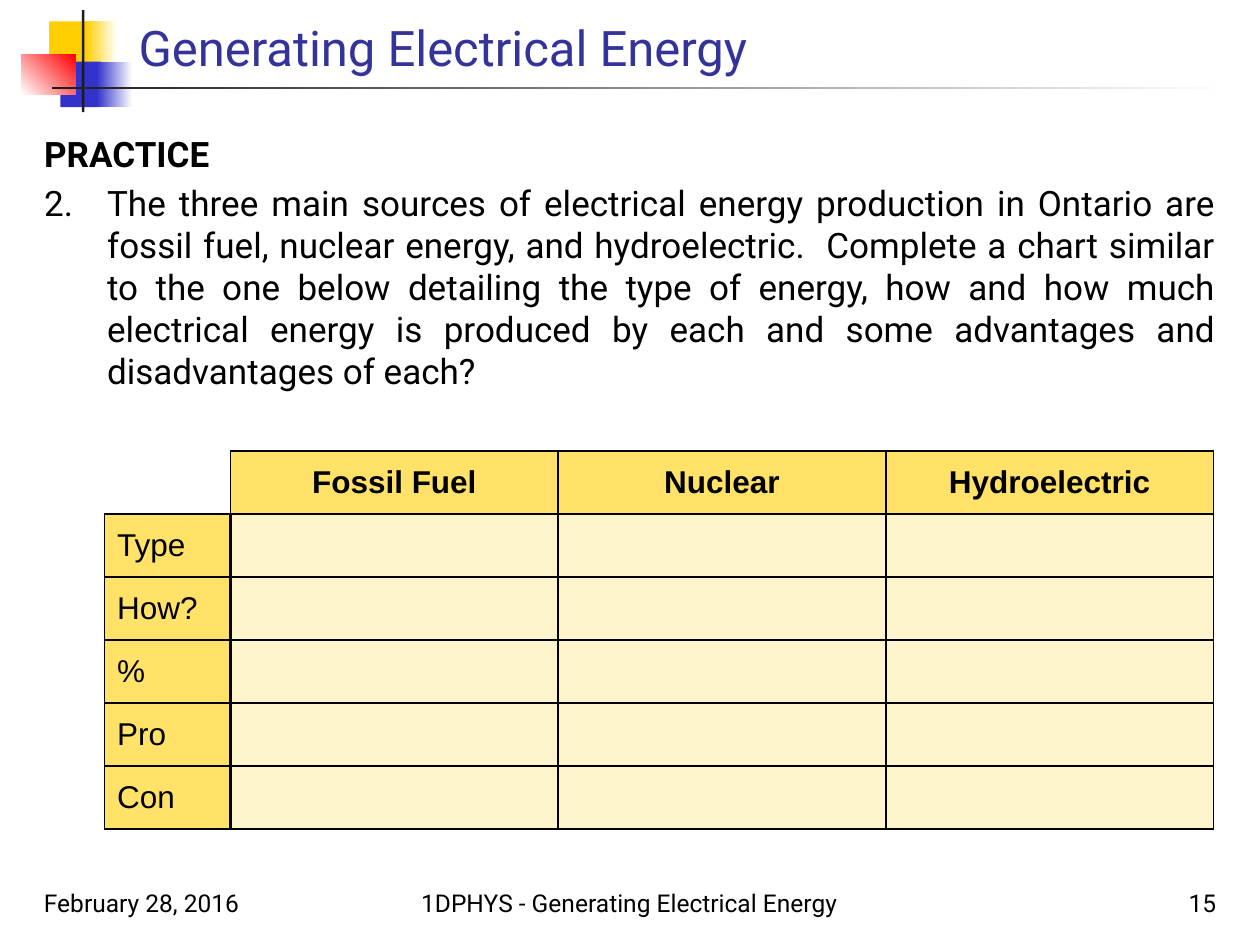
from pptx import Presentation
from pptx.dml.color import RGBColor
from pptx.enum.shapes import MSO_SHAPE as SHAPE
from pptx.enum.text import MSO_ANCHOR as ANCHOR, MSO_AUTO_SIZE as AUTO, PP_ALIGN as ALIGN
from pptx.oxml.xmlchemy import OxmlElement as Element
from pptx.util import Inches, Pt

BLACK = RGBColor(0x00, 0x00, 0x00)
WHITE = RGBColor(0xFF, 0xFF, 0xFF)
CHARCOAL = RGBColor(0x1C, 0x1C, 0x1C)
YELLOW = RGBColor(0xFF, 0xCF, 0x01)
BLUE = RGBColor(0x33, 0x33, 0xCC)
RED = RGBColor(0xFF, 0x00, 0x00)
NAVY = RGBColor(0x33, 0x33, 0x99)
GOLD = RGBColor(0xFF, 0xE2, 0x67)
CREAM = RGBColor(0xFF, 0xF5, 0xCC)

BODY = {"name": "Roboto", "size": Pt(20), "bold": False}
FOOTER = {"name": "Roboto", "size": Pt(14)}
CELL = {"name": "Arial", "size": Pt(18), "bold": False}

EMBLEM = [
    ((0.39, 0.17, 0.34, 0.36), (YELLOW,), 0),
    ((0.68, 0.17, 0.25, 0.36), (YELLOW, WHITE), 0),
    ((0.48, 0.49, 0.32, 0.36), (BLUE,), 0),
    ((0.77, 0.49, 0.28, 0.36), (BLUE, WHITE), 0),
    ((0.17, 0.43, 0.43, 0.32), (WHITE, RED), 45),
    ((0.65, 0.08, 0.02, 0.81), (CHARCOAL,), 0),
    ((0.41, 0.69, 9.33, 0.02), (CHARCOAL, WHITE), 0),
]
QUESTION = (
    "2.\tThe three main sources of electrical energy production in Ontario are "
    "fossil fuel, nuclear energy, and hydroelectric.  Complete a chart similar to "
    "the one below detailing the type of energy, how and how much electrical energy "
    "is produced by each and some advantages and disadvantages of each?"
)
FOOTERS = [
    (0.25, 2.08, "February 28, 2016", ALIGN.LEFT),
    (2.58, 4.83, "1DPHYS - Generating Electrical Energy", ALIGN.CENTER),
    (7.67, 2.08, "15", ALIGN.RIGHT),
]
SOURCES = ["Fossil Fuel", "Nuclear", "Hydroelectric"]
TOPICS = ["Type", "How?", "%", "Pro", "Con"]


def write(p, text, font, color=BLACK, align=ALIGN.LEFT):
    p.alignment = align
    r = p.add_run()
    r.text = text
    for key, value in font.items():
        setattr(r.font, key, value)
    r.font.color.rgb = color


def place(sp, left, top, width, height):
    box = {"left": left, "top": top, "width": width, "height": height}
    for key, value in box.items():
        setattr(sp, key, Inches(value))


def add_block(shapes, box, colors, angle):
    sp = shapes.add_shape(SHAPE.RECTANGLE, *map(Inches, box))
    sp.shadow.inherit = False
    sp.line.fill.background()
    if len(colors) == 1:
        sp.fill.solid()
        sp.fill.fore_color.rgb = colors[0]
    else:
        sp.fill.gradient()
        sp.fill.gradient_angle = angle
        for stop, color in zip(sp.fill.gradient_stops, colors):
            stop.color.rgb = color


def add_title(s):
    sp = s.shapes.title
    place(sp, 1, 0.08, 8.75, 0.58)
    tf = sp.text_frame
    tf.auto_size = AUTO.NONE
    tf.vertical_anchor = ANCHOR.BOTTOM
    write(tf.paragraphs[0], "Generating Electrical Energy",
          {"name": "Roboto", "size": Pt(28)}, NAVY)


def add_body(s):
    sp = s.placeholders[1]
    place(sp, 0.25, 1, 9.5, 5.67)
    tf = sp.text_frame
    tf.auto_size = AUTO.NONE
    write(tf.paragraphs[0], "PRACTICE", {**BODY, "bold": True}, align=ALIGN.JUSTIFY)
    write(tf.add_paragraph(), QUESTION, BODY, align=ALIGN.JUSTIFY)
    for p, indent in zip(tf.paragraphs, (0, 0.5)):
        p.space_before = Pt(4)
        pPr = p._p.get_or_add_pPr()
        pPr.set("marL", str(Inches(indent)))
        pPr.set("indent", str(-Inches(indent)))
        pPr.append(Element("a:buNone"))


def add_footer(s, left, width, text, align):
    sp = s.shapes.add_textbox(*map(Inches, (left, 6.83, width, 0.5)))
    tf = sp.text_frame
    tf.word_wrap = True
    tf.vertical_anchor = ANCHOR.BOTTOM
    write(tf.paragraphs[0], text, FOOTER, align=align)


def set_borders(cell, widths):
    tcPr = cell._tc.get_or_add_tcPr()
    for side, width in widths.items():
        ln = Element(f"a:ln{side}")
        ln.set("w", str(Pt(width)))
        if width:
            fill = Element("a:solidFill")
            color = Element("a:srgbClr")
            color.set("val", str(BLACK))
            fill.append(color)
        else:
            fill = Element("a:noFill")
        ln.append(fill)
        tcPr.append(ln)


def format_cell(cell, row, col):
    corner = row == col == 0
    set_borders(cell, {
        "L": 0 if corner else 1.5 if row and col == 1 else 1,
        "R": 1.5 if row and col == 0 else 1,
        "T": 0 if corner else 1.5 if col and row == 1 else 1,
        "B": 1.5 if col and row == 0 else 1,
    })
    if corner:
        cell.fill.background()
    else:
        cell.fill.solid()
        cell.fill.fore_color.rgb = CREAM if row and col else GOLD
    cell.vertical_anchor = ANCHOR.MIDDLE
    p = cell.text_frame.paragraphs[0]
    if row == 0 and col:
        write(p, SOURCES[col - 1], {**CELL, "bold": True}, align=ALIGN.CENTER)
    elif row and col == 0:
        write(p, TOPICS[row - 1], CELL)


def add_chart_table(s):
    rows, cols = len(TOPICS) + 1, len(SOURCES) + 1
    box = map(Inches, (0.83, 3.58, 8.8, 0.5 * rows))
    table = s.shapes.add_table(rows, cols, *box).table
    table.horz_banding = False
    for col, column in enumerate(table.columns):
        column.width = Inches(2.6 if col else 1)
    for row in range(rows):
        for col in range(cols):
            format_cell(table.cell(row, col), row, col)


def main():
    prs = Presentation()
    prs.slide_width, prs.slide_height = Inches(10), Inches(7.5)
    s = prs.slides.add_slide(prs.slide_layouts[1])
    emblem = s.shapes.add_group_shape()
    for block in EMBLEM:
        add_block(emblem.shapes, *block)
    add_title(s)
    add_body(s)
    for footer in FOOTERS:
        add_footer(s, *footer)
    add_chart_table(s)
    prs.save("out.pptx")


if __name__ == "__main__":
    main()
